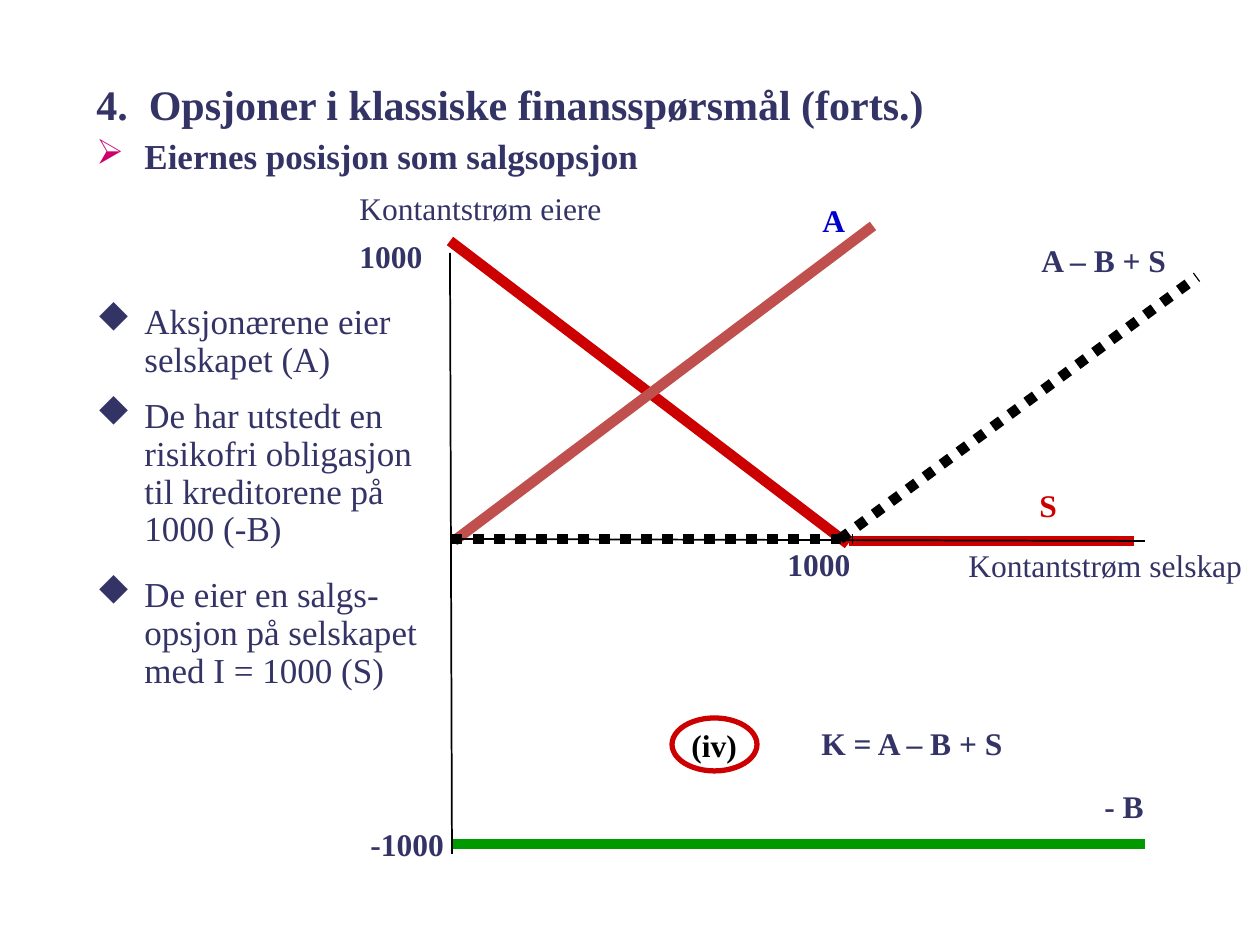
from dataclasses import dataclass

from lxml import etree
from pptx import Presentation
from pptx import util as u
from pptx.dml.color import RGBColor
from pptx.enum import dml, shapes, text
from pptx.oxml.ns import qn

PX_PER_INCH = 126
FONT = "Times New Roman"
BULLET_FONT = "Wingdings"
DIAMOND, ARROW = "u", "Ø"  # bullet characters as Wingdings encodes them
NAVY, RED, GREEN, BLACK = "333366", "CC0000", "009900", "000000"
ROSE, BLUE, PINK = "C0504D", "0000CC", "CC0066"
HANGING = 48


@dataclass
class Label:
    text: str
    x: int
    y: int
    w: int
    h: int = 50
    size: int = 18
    color: str = NAVY
    bold: bool = True
    middle: bool = False


@dataclass
class Bullet:
    label: Label
    char: str = DIAMOND
    color: str = NAVY


@dataclass
class Line:
    x1: int
    y1: int
    x2: int
    y2: int
    color: str = BLACK
    width: int = 6
    dotted: bool = False


TITLE = Label("4.  Opsjoner i klassiske finansspørsmål (forts.)",
              84, 46, 1124, 116, size=24, middle=True)

BULLETS = [
    Bullet(Label("Eiernes posisjon som salgsopsjon", 84, 133, 651, 63, 20), ARROW, PINK),
    Bullet(Label("Aksjonærene eier selskapet (A)", 84, 298, 410, 84, 20, bold=False)),
    Bullet(Label("De har utstedt en risikofri obligasjon til kreditorene på 1000 (-B)",
                 84, 392, 357, 147, 20, bold=False)),
    Bullet(Label("De eier en salgs-opsjon på selskapet med I = 1000 (S)",
                 84, 571, 357, 147, 20, bold=False)),
]

PAYOFFS = [
    Line(848, 544, 450, 241, RED),
    Line(849, 541, 1134, 541, RED),
    Line(452, 844, 1145, 844, GREEN),
    Line(873, 226, 454, 541, ROSE),
    Line(452, 539, 852, 539, dotted=True),
    Line(840, 539, 1197, 277, dotted=True),
]

AXES = [
    Line(450, 253, 452, 854, width=1),
    Line(452, 539, 1145, 541, width=1),
]

LABELS = [
    Label("S", 1027, 480, 126, color=RED),
    Label("(iv)", 679, 720, 79, color=BLACK),
    Label("- B", 1092, 781, 73),
    Label("-1000", 358, 819, 136),
    Label("A", 810, 195, 84, color=BLUE),
    Label("1000", 775, 539, 160),
    Label("A – B + S", 1029, 235, 189),
    Label("K = A – B + S", 809, 718, 347),
    Label("1000", 347, 231, 136),
    Label("Kontantstrøm selskap", 956, 540, 304, bold=False),
    Label("Kontantstrøm eiere", 347, 183, 294, bold=False),
]


def px(n: int) -> u.Emu:
    return u.Emu(n * 914400 // PX_PER_INCH)


def rgb(color: str) -> RGBColor:
    return RGBColor.from_string(color)


def draw_label(s, label: Label):
    """Add a wrapped text box and return its only paragraph."""
    sp = s.shapes.add_textbox(px(label.x), px(label.y), px(label.w), px(label.h))
    tf = sp.text_frame
    tf.word_wrap = True
    if label.middle:
        tf.vertical_anchor = text.MSO_ANCHOR.MIDDLE
    tf.text = label.text
    p = tf.paragraphs[0]
    font = p.runs[0].font
    font.name, font.size, font.bold = FONT, u.Pt(label.size), label.bold
    font.color.rgb = rgb(label.color)
    return p


def draw_bullet(s, bullet: Bullet) -> None:
    p = draw_label(s, bullet.label)
    p.line_spacing = 0.9
    pPr = p._p.get_or_add_pPr()
    pPr.set("marL", str(px(HANGING)))
    pPr.set("indent", str(-px(HANGING)))
    clr = etree.SubElement(pPr, qn("a:buClr"))
    etree.SubElement(clr, qn("a:srgbClr"), val=bullet.color)
    etree.SubElement(pPr, qn("a:buFont"), typeface=BULLET_FONT,
                     pitchFamily="2", charset="2")
    etree.SubElement(pPr, qn("a:buChar"), char=bullet.char)


def draw_line(s, line: Line) -> None:
    sp = s.shapes.add_connector(shapes.MSO_CONNECTOR.STRAIGHT, px(line.x1),
                                px(line.y1), px(line.x2), px(line.y2))
    sp.line.color.rgb = rgb(line.color)
    sp.line.width = u.Pt(line.width)
    if line.dotted:
        sp.line.dash_style = dml.MSO_LINE.ROUND_DOT
    etree.SubElement(sp._element.spPr, qn("a:effectLst"))


def draw_ring(s, x: int, y: int, w: int, h: int) -> None:
    sp = s.shapes.add_shape(shapes.MSO_SHAPE.OVAL, px(x), px(y), px(w), px(h))
    sp.shadow.inherit = False
    sp.fill.background()
    sp.line.color.rgb = rgb(RED)
    sp.line.width = u.Pt(3)


def main() -> None:
    prs = Presentation()
    prs.slide_width, prs.slide_height = px(1260), px(945)
    s = prs.slides.add_slide(prs.slide_layouts[6])
    draw_label(s, TITLE)
    for bullet in BULLETS:
        draw_bullet(s, bullet)
    for line in PAYOFFS + AXES:
        draw_line(s, line)
    draw_ring(s, 672, 718, 85, 53)
    for label in LABELS:
        draw_label(s, label)
    prs.save("out.pptx")


if __name__ == "__main__":
    main()
